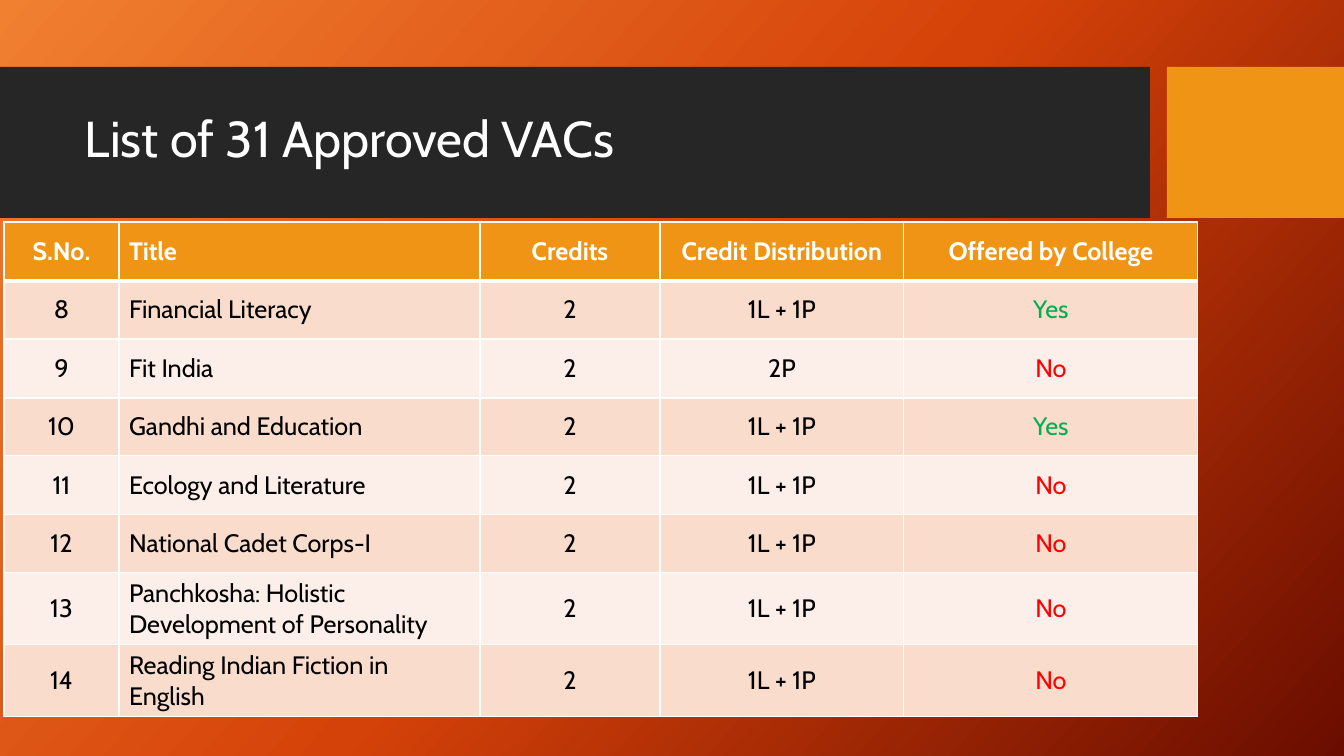
from lxml.etree import SubElement
from pptx import Presentation
from pptx.dml.color import RGBColor
from pptx.enum.shapes import MSO_SHAPE
from pptx.enum.text import MSO_ANCHOR, PP_ALIGN
from pptx.oxml.ns import qn
from pptx.util import Emu, Pt

COLORS = {
    "glow": "F18031", "flame": "D54209", "ember": "6A0D00",
    "charcoal": "262626", "orange": "F09415", "white": "FFFFFF",
    "peach": "F9DCCC", "cream": "FCEEE8", "black": "000000",
    "Yes": "00B050", "No": "FF0000",
}
FONT = "Cabin"
HEADINGS = ["S.No.", "Title", "Credits", "Credit Distribution", "Offered by College"]
FIRST_NUMBER = 8
COURSES = [
    ("Financial Literacy", "1L + 1P", "Yes"),
    ("Fit India", "2P", "No"),
    ("Gandhi and Education", "1L + 1P", "Yes"),
    ("Ecology and Literature", "1L + 1P", "No"),
    ("National Cadet Corps-I", "1L + 1P", "No"),
    ("Panchkosha: Holistic Development of Personality", "1L + 1P", "No"),
    ("Reading Indian Fiction in English", "1L + 1P", "No"),
]
COLUMN_WIDTHS = [115, 361, 180, 244, 294]
ROW_HEIGHTS = [59, 58] * 3 + [72, 72]


def px(*lengths):
    """Turn slide pixels (1344 across) into EMU."""
    return [Emu(round(length * 12192000 / 1344)) for length in lengths]


def style(para, size, color, bold=False):
    para.font.name = FONT
    para.font.size = Pt(size)
    para.font.bold = bold
    para.font.color.rgb = RGBColor.from_string(COLORS[color])


deck = Presentation()
deck.slide_width, deck.slide_height = px(1344, 756)
page = deck.slides.add_slide(deck.slide_layouts[6])

# Background gradient
backdrop = page.background.fill
backdrop.gradient()
backdrop.gradient_angle = 360 - 42
stops = page.element.find(".//" + qn("a:gsLst"))
for stop in list(stops):
    stops.remove(stop)
for percent, color in [(0, "glow"), (50, "flame"), (100, "ember")]:
    stop = SubElement(stops, qn("a:gs"), pos=str(percent * 1000))
    SubElement(stop, qn("a:srgbClr"), val=COLORS[color])

# Title band
for left, width, color in [(0, 1150, "charcoal"), (1167, 177, "orange")]:
    band = page.shapes.add_shape(MSO_SHAPE.RECTANGLE, *px(left, 67, width, 151))
    band.shadow.inherit = False
    band.fill.solid()
    band.fill.fore_color.rgb = RGBColor.from_string(COLORS[color])
    band.line.fill.background()

title = page.shapes.add_textbox(*px(75, 82, 1059, 119)).text_frame
title.word_wrap = True
title.vertical_anchor = MSO_ANCHOR.MIDDLE
para = title.paragraphs[0]
para.text = "List of 31 Approved VACs"
para.line_spacing = 0.9
style(para, 36, "white")

# Course table
rows = [HEADINGS]
for number, (course, distribution, offered) in enumerate(COURSES, FIRST_NUMBER):
    rows.append([str(number), course, "2", distribution, offered])

table = page.shapes.add_table(
    len(rows), len(HEADINGS), *px(4, 222, sum(COLUMN_WIDTHS), sum(ROW_HEIGHTS))
).table
for column, width in zip(table.columns, px(*COLUMN_WIDTHS)):
    column.width = width
for row, height in zip(table.rows, px(*ROW_HEIGHTS)):
    row.height = height

for row_index, texts in enumerate(rows):
    is_header = row_index == 0
    fill = "orange" if is_header else ("cream", "peach")[row_index % 2]
    for column_index, text in enumerate(texts):
        cell = table.cell(row_index, column_index)
        cell.vertical_anchor = MSO_ANCHOR.MIDDLE
        properties = cell._tc.get_or_add_tcPr()
        for side in ("L", "R", "T", "B"):
            under_header = (row_index, side) in [(0, "B"), (1, "T")]
            weight = Pt(3 if under_header else 1)
            border = SubElement(properties, qn(f"a:ln{side}"), w=str(weight))
            paint = SubElement(border, qn("a:solidFill"))
            SubElement(paint, qn("a:srgbClr"), val=COLORS["white"])
        cell.fill.solid()
        cell.fill.fore_color.rgb = RGBColor.from_string(COLORS[fill])

        para = cell.text_frame.paragraphs[0]
        para.text = text
        if HEADINGS[column_index] != "Title":
            para.alignment = PP_ALIGN.CENTER
        if is_header:
            color = "white"
        else:
            color = text if text in ("Yes", "No") else "black"
        style(para, 18, color, bold=is_header)

deck.save("out.pptx")
